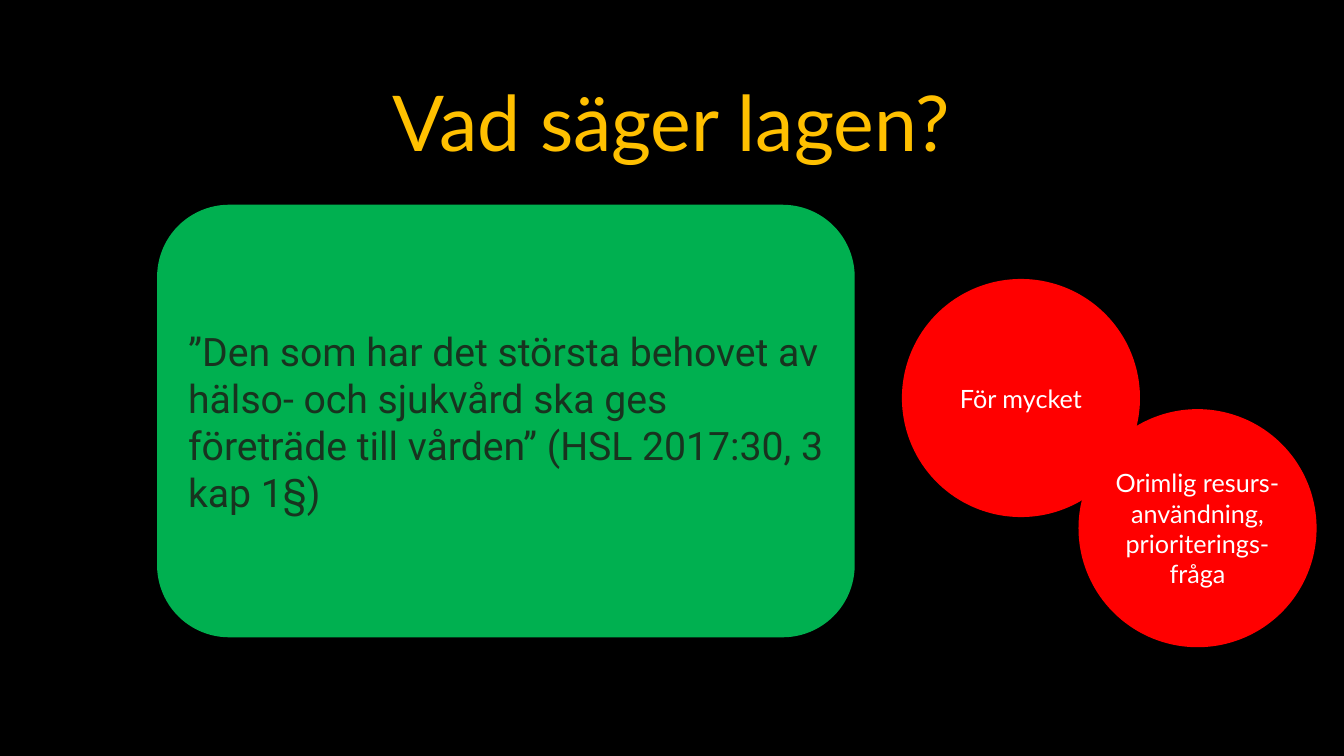
from pptx import Presentation
from pptx.dml.color import RGBColor
from pptx.enum.shapes import MSO_SHAPE
from pptx.enum.text import MSO_ANCHOR, PP_ALIGN
from pptx.util import Cm, Pt

BLACK = RGBColor(0, 0, 0)
GOLD = RGBColor(0xFF, 0xC0, 0)
GREEN = RGBColor(0, 0xB0, 0x50)
RED = RGBColor(0xFF, 0, 0)
WHITE = RGBColor(0xFF, 0xFF, 0xFF)
DARK = RGBColor(0x18, 0x33, 0x1F)

ROUND, OVAL = MSO_SHAPE.ROUNDED_RECTANGLE, MSO_SHAPE.OVAL
LEFT, CENTER = PP_ALIGN.LEFT, PP_ALIGN.CENTER


def write(shape, text, font, size, color, align):
    frame = shape.text_frame
    frame.text = text
    frame.word_wrap = True
    frame.vertical_anchor = MSO_ANCHOR.MIDDLE
    para = frame.paragraphs[0]
    para.alignment = align
    run = para.runs[0]
    run.font.name = font
    run.font.size = Pt(size)
    run.font.color.rgb = color


deck = Presentation()
deck.slide_width, deck.slide_height = Cm(33.87), Cm(19.05)
slide = deck.slides.add_slide(deck.slide_layouts[5])
slide.background.fill.solid()
slide.background.fill.fore_color.rgb = BLACK

title = slide.shapes.title
title.left, title.top = Cm(2.54), Cm(1.7)
title.width, title.height = Cm(28.75), Cm(2.69)
write(title, "Vad säger lagen?", "Lato", 55, GOLD, CENTER)

quote = (
    "”Den som har det största behovet av hälso- och sjukvård ska ges "
    "företräde till vården” (HSL 2017:30, 3 kap 1§)"
)
burden = "Orimlig resurs-användning, prioriterings-fråga"
side = 6  # diameter of the circles in cm

# kind, left, top, width, height, side inset, fill, text, font, size, colour, alignment
items = [
    (OVAL, 27.18, 10.31, side, side, 0, RED, burden, "Lato", 18, WHITE, CENTER),
    (ROUND, 3.96, 5.16, 17.58, 10.9, 0.25, GREEN, quote, "Roboto", 28, DARK, LEFT),
    (OVAL, 22.73, 7.03, side, side, 0.25, RED, "För mycket", "Lato", 18, WHITE, CENTER),
]
for kind, left, top, width, height, inset, fill, *words in items:
    shape = slide.shapes.add_shape(kind, Cm(left), Cm(top), Cm(width), Cm(height))
    shape.shadow.inherit = False
    shape.fill.solid()
    shape.fill.fore_color.rgb = fill
    shape.line.fill.background()
    shape.text_frame.margin_left = shape.text_frame.margin_right = Cm(inset)
    write(shape, *words)

deck.save("out.pptx")
